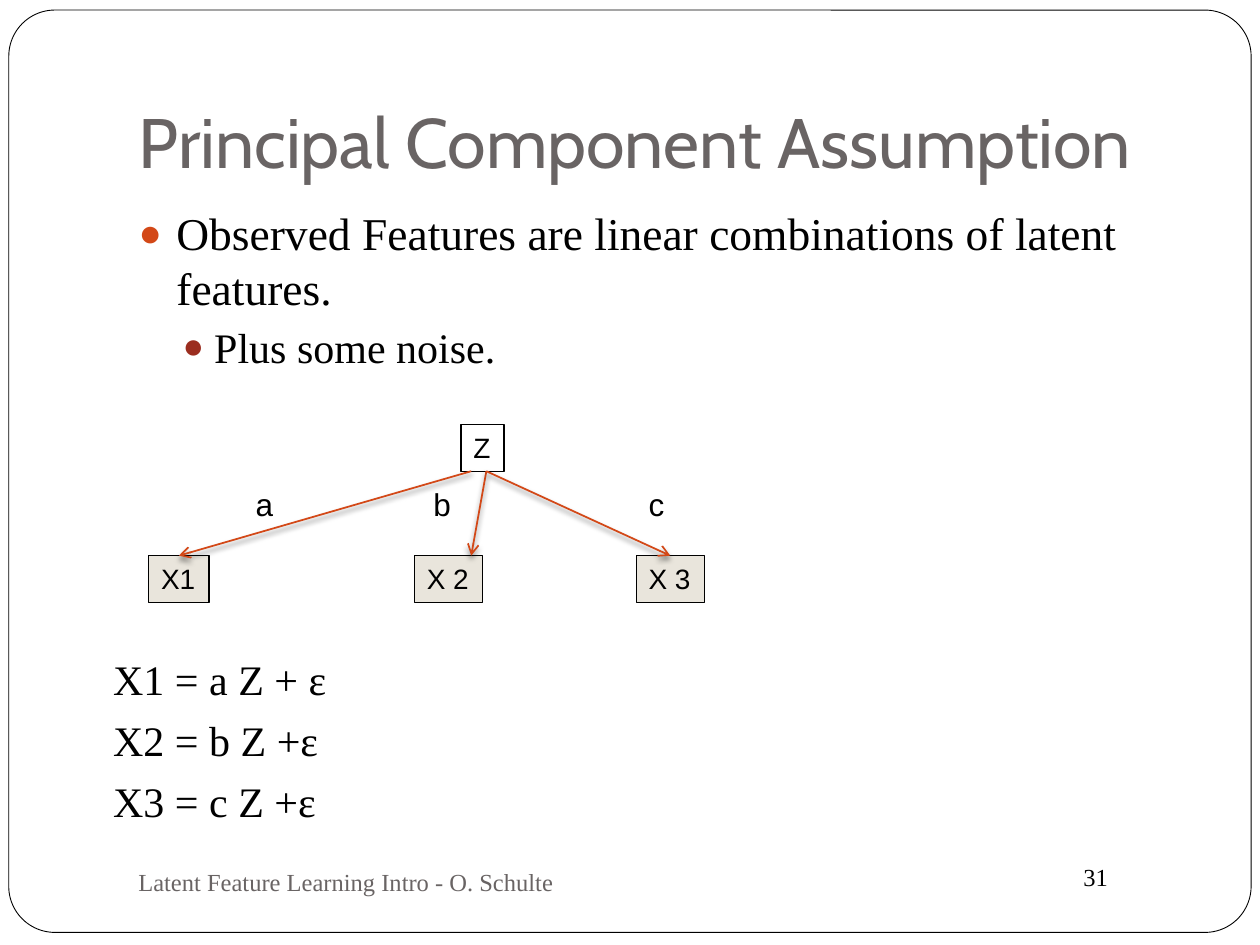
"""Build a slide on the linear assumption behind principal components."""
from lxml.etree import SubElement
from pptx import Presentation
from pptx.dml.color import RGBColor
from pptx.enum.shapes import MSO_CONNECTOR, MSO_SHAPE
from pptx.enum.text import MSO_ANCHOR, MSO_AUTO_SIZE, PP_ALIGN
from pptx.oxml import parse_xml
from pptx.oxml.ns import nsdecls, qn
from pptx.util import Inches, Pt

COLORS = {"black": "000000", "white": "FFFFFF", "gray": "696464",
          "orange": "D34817", "red": "9B2D1F", "beige": "E9E5DC"}
SERIF = {"name": "Times New Roman", "size": Pt(24)}
SMALL_SERIF = {"name": "Times New Roman", "size": Pt(14)}
NODE_FONT = {"name": "Arial", "size": Pt(16)}
LABEL_FONT = {"name": "Arial", "size": Pt(18)}
TITLE_FONT = {"name": "Cabin", "size": Pt(40)}
FIXED = {"word_wrap": True, "auto_size": MSO_AUTO_SIZE.NONE}
GROWING = {"word_wrap": True, "auto_size": MSO_AUTO_SIZE.SHAPE_TO_FIT_TEXT}
NODE_FRAME = {"word_wrap": False, "auto_size": MSO_AUTO_SIZE.SHAPE_TO_FIT_TEXT,
              "vertical_anchor": MSO_ANCHOR.TOP}


def write_text(shape, lines, font, frame, color="black"):
    text_frame = shape.text_frame
    for name, value in frame.items():
        setattr(text_frame, name, value)
    text_frame.text = "\n".join(lines)
    for paragraph in text_frame.paragraphs:
        paragraph.alignment = PP_ALIGN.LEFT
        run_font = paragraph.runs[0].font
        for name, value in font.items():
            setattr(run_font, name, value)
        run_font.color.rgb = RGBColor.from_string(COLORS[color])


def style_shape(shape, fill, width):
    shape.shadow.inherit = False
    if fill:
        shape.fill.solid()
        shape.fill.fore_color.rgb = RGBColor.from_string(COLORS[fill])
    else:
        shape.fill.background()
    shape.line.color.rgb = RGBColor.from_string(COLORS["black"])
    shape.line.width = Pt(width)


presentation = Presentation()
presentation.slide_width = Inches(10)
presentation.slide_height = Inches(7.5)
slide = presentation.slides.add_slide(presentation.slide_layouts[1])
shapes = slide.shapes

border = shapes.add_shape(MSO_SHAPE.ROUNDED_RECTANGLE, Inches(0.07), Inches(0.08),
                          Inches(9.86), Inches(7.32))
border.adjustments[0] = 0.05
style_shape(border, "white", 0.5)
shapes.title._element.addprevious(border._element)

title, body = shapes.title, slide.placeholders[1]
for placeholder, top, height in [(title, 0.3, 1.25), (body, 1.58, 1.61)]:
    placeholder.left, placeholder.top = Inches(1), Inches(top)
    placeholder.width, placeholder.height = Inches(8.5), Inches(height)
write_text(title, ["Principal Component Assumption"], TITLE_FONT,
           {**FIXED, "vertical_anchor": MSO_ANCHOR.BOTTOM, "margin_bottom": Inches(0.1)},
           "gray")
write_text(body, ["Observed Features are linear combinations of latent features.",
                  "Plus some noise."], SERIF, FIXED)

bullets = [(0, 26, 5.8, 0.3, 0.3, "orange"), (1, 24, 3.8, 0.6, 0.25, "red")]
for paragraph, (level, size, before, indent, hanging, color) in zip(
        body.text_frame.paragraphs, bullets):
    paragraph.level = level
    paragraph.space_before = Pt(before)
    paragraph.runs[0].font.size = Pt(size)
    properties = paragraph._p.get_or_add_pPr()
    properties.set("marL", str(Inches(indent)))
    properties.set("indent", str(-Inches(hanging)))
    bullet_color = SubElement(properties, qn("a:buClr"))
    SubElement(bullet_color, qn("a:srgbClr"), val=COLORS[color])
    SubElement(properties, qn("a:buSzPct"), val="85000")
    SubElement(properties, qn("a:buChar"), char="●")

nodes = {}
for name, left, top, width, fill in [
        ("X1", 1.18, 4.41, 0.48, "beige"), ("X 2", 3.29, 4.41, 0.54, "beige"),
        ("X 3", 5.05, 4.41, 0.54, "beige"), ("Z", 3.66, 3.37, 0.34, None)]:
    node = shapes.add_shape(MSO_SHAPE.RECTANGLE, Inches(left), Inches(top),
                            Inches(width), Inches(0.37))
    style_shape(node, fill, 0.75)
    write_text(node, [name], NODE_FONT, NODE_FRAME)
    nodes[name] = node

for start, end, target in [(3.74, 1.42, "X1"), (3.86, 3.74, None), (3.86, 5.32, "X 3")]:
    arrow = shapes.add_connector(MSO_CONNECTOR.STRAIGHT, Inches(start), Inches(3.74),
                                 Inches(end), Inches(4.41))
    if target:
        arrow.end_connect(nodes[target], 0)
    arrow.line.color.rgb = RGBColor.from_string(COLORS["orange"])
    arrow.line.width = Pt(1)
    SubElement(arrow.line._get_or_add_ln(), qn("a:tailEnd"), type="arrow")
    arrow._element.spPr.append(parse_xml(
        f'<a:effectLst {nsdecls("a")}>'
        f'<a:outerShdw blurRad="{Pt(3)}" dist="{Pt(2)}" dir="5400000" rotWithShape="0">'
        f'<a:srgbClr val="{COLORS["black"]}"><a:alpha val="50000"/></a:srgbClr>'
        '</a:outerShdw></a:effectLst>'))

for label, left in [("a", 1.93), ("b", 3.34), ("c", 5.05)]:
    box = shapes.add_textbox(Inches(left), Inches(3.8), Inches(0.39), Inches(0.4))
    write_text(box, [label], LABEL_FONT, GROWING)

equations = shapes.add_textbox(Inches(0.8), Inches(5.14), Inches(8.5), Inches(1.61))
write_text(equations, ["X1 = a Z + ε", "X2 = b Z +ε", "X3 = c Z +ε"], SERIF, FIXED)
for paragraph in equations.text_frame.paragraphs:
    paragraph.space_before = Pt(5.8)
    properties = paragraph._p.get_or_add_pPr()
    properties.set("marL", str(Inches(0.3)))
    properties.set("indent", str(-Inches(0.3)))

footer = shapes.add_textbox(Inches(1), Inches(6.75), Inches(4.33), Inches(0.5))
write_text(footer, ["Latent Feature Learning Intro - O. Schulte"], SMALL_SERIF,
           {**FIXED, "vertical_anchor": MSO_ANCHOR.MIDDLE}, "gray")
page_number = shapes.add_textbox(Inches(8.5), Inches(6.79), Inches(1), Inches(0.34))
write_text(page_number, ["31"], SMALL_SERIF, GROWING)

presentation.save("out.pptx")
